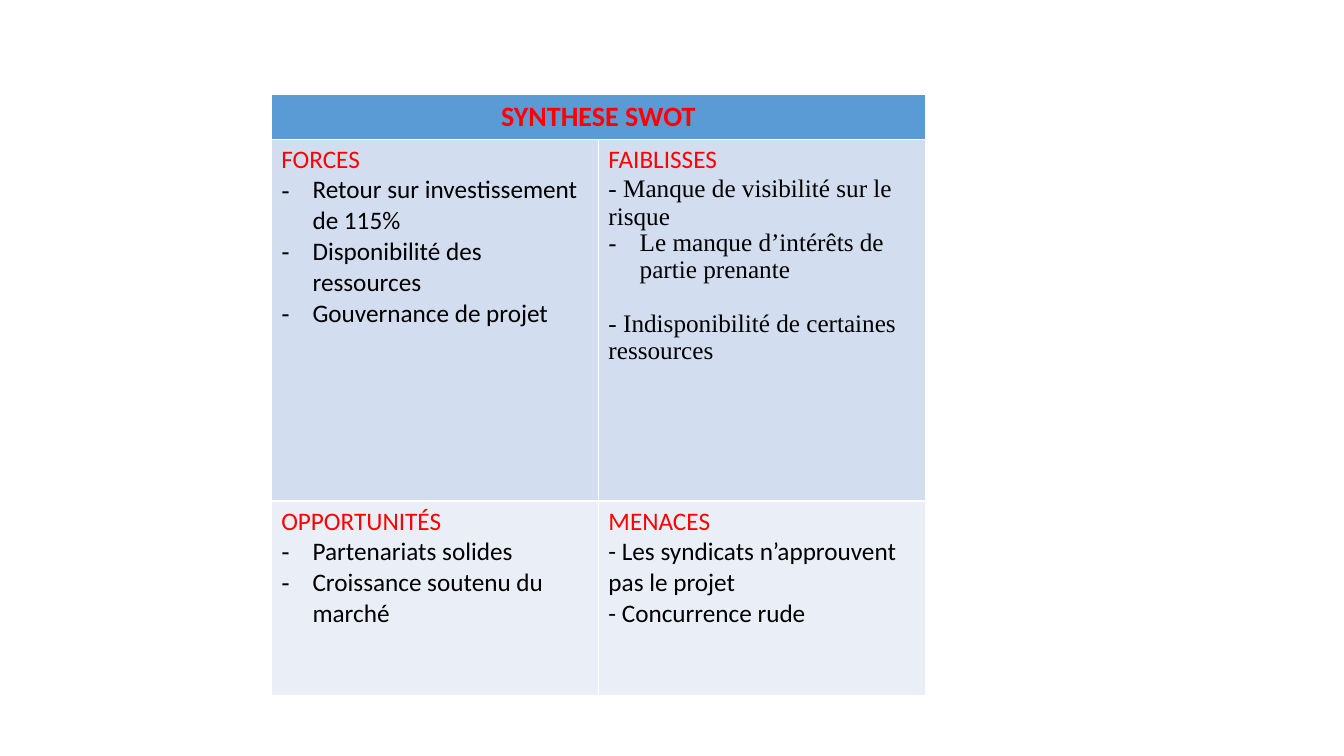
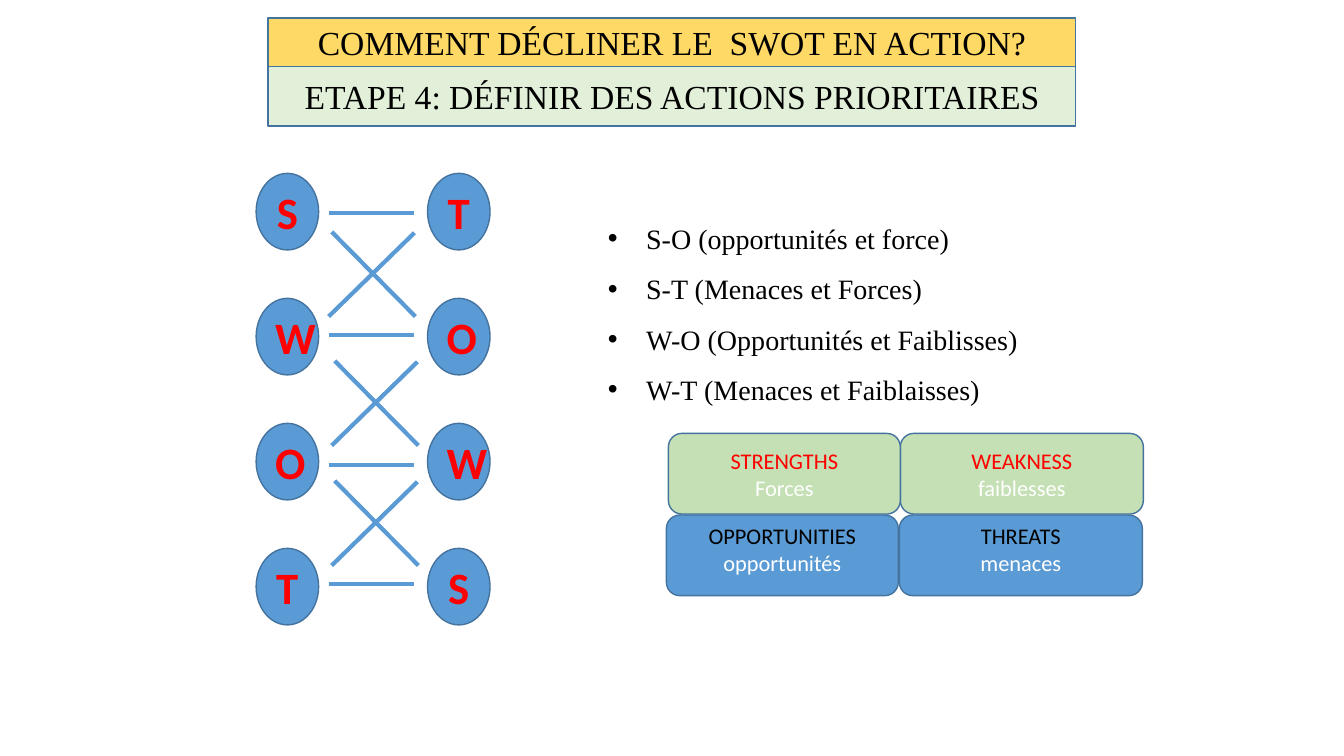
from dataclasses import dataclass

from lxml.etree import SubElement
from pptx import Presentation
from pptx.dml.color import RGBColor
from pptx.enum.shapes import MSO_CONNECTOR, MSO_SHAPE
from pptx.enum.text import MSO_ANCHOR, MSO_AUTO_SIZE, PP_ALIGN
from pptx.oxml.ns import qn
from pptx.shapes.autoshape import Shape
from pptx.slide import Slide
from pptx.table import _Cell as Cell
from pptx.text.text import TextFrame, _Paragraph as Paragraph
from pptx.util import Inches, Pt

BLUE = RGBColor(0x5B, 0x9B, 0xD5)
DARK_BLUE = RGBColor(0x43, 0x73, 0x9E)
PALE_BLUE = RGBColor(0xD2, 0xDE, 0xEF)
PALEST_BLUE = RGBColor(0xEA, 0xEF, 0xF7)
GREEN = RGBColor(0xC5, 0xE0, 0xB4)
PALE_GREEN = RGBColor(0xE2, 0xF0, 0xD9)
YELLOW = RGBColor(0xFF, 0xD9, 0x66)
RED = RGBColor(0xFF, 0x00, 0x00)
BLACK = RGBColor(0x00, 0x00, 0x00)
WHITE = RGBColor(0xFF, 0xFF, 0xFF)

SANS = "Calibri"
SERIF = "Times New Roman"
TITLE_ONLY_LAYOUT, BLANK_LAYOUT = 5, 6


@dataclass(frozen=True)
class Line:
    text: str
    size: float = 18
    color: RGBColor = BLACK
    font: str = SANS
    bold: bool = False
    bullet: str = ""
    hanging: float = 0.31
    spacing: float = 1.0
    space_before: float = 0
    align: PP_ALIGN = PP_ALIGN.LEFT


@dataclass(frozen=True)
class Box:
    left: float
    top: float
    width: float
    height: float

    def lengths(self) -> tuple[Inches, Inches, Inches, Inches]:
        return Inches(self.left), Inches(self.top), Inches(self.width), Inches(self.height)


@dataclass(frozen=True)
class Card:
    box: Box
    english: str
    french: str
    fill: RGBColor
    heading_color: RGBColor
    raised: bool = False


def dash(text: str) -> Line:
    return Line(text, bullet="-")


def heading(text: str) -> Line:
    return Line(text, color=RED)


SWOT_ROWS = [
    (PALE_BLUE, [
        [heading("FORCES"), dash("Retour sur investissement de 115%"),
         dash("Disponibilité des ressources"), dash("Gouvernance de projet")],
        [heading("FAIBLISSES"),
         Line("- Manque de visibilité sur le risque", font=SERIF),
         Line("Le manque d’intérêts de partie prenante", font=SERIF, bullet="-", spacing=0.95),
         Line("- Indisponibilité de certaines ressources", font=SERIF, spacing=0.95,
              space_before=20)],
    ]),
    (PALEST_BLUE, [
        [heading("OPPORTUNITÉS"), dash("Partenariats solides"),
         dash("Croissance soutenu du marché")],
        [heading("MENACES"), Line("- Les syndicats n’approuvent pas le projet"),
         Line("- Concurrence rude")],
    ]),
]
ROW_HEIGHTS = (0.44, 3.59, 1.93)
COLUMN_WIDTH = 3.245

LETTER_COLUMNS = ((2.54, "SWOT"), (4.24, "TOWS"))
LETTER_TOP, LETTER_PITCH = 1.72, 1.24
RUNG_TOPS = (2.11, 3.32, 4.61, 5.79)
CROSSES = ((3.29, 2.3), (3.32, 3.58), (3.32, 4.77))

PAIRINGS = (
    "S-O (opportunités et force)",
    "S-T (Menaces et Forces)",
    "W-O (Opportunités et Faiblisses)",
    "W-T (Menaces et Faiblaisses)",
)
CARDS = (
    Card(Box(8.92, 5.11, 2.41, 0.8), "THREATS", "menaces", BLUE, BLACK, raised=True),
    Card(Box(8.93, 4.3, 2.41, 0.8), "WEAKNESS", "faiblesses", GREEN, RED),
    Card(Box(6.63, 4.3, 2.3, 0.8), "STRENGTHS", "Forces", GREEN, RED),
    Card(Box(6.61, 5.11, 2.3, 0.8), "OPPORTUNITIES", "opportunités", BLUE, BLACK, raised=True),
)


def add_bullet(paragraph: Paragraph, character: str, hanging: float) -> None:
    properties = paragraph._p.get_or_add_pPr()
    properties.set("marL", str(Inches(hanging)))
    properties.set("indent", str(-Inches(hanging)))
    SubElement(properties, qn("a:buFont")).set("typeface", "Arial")
    SubElement(properties, qn("a:buChar")).set("char", character)


def write_lines(text_frame: TextFrame, lines: list[Line]) -> None:
    text_frame.text = "\n".join(line.text for line in lines)
    for paragraph, line in zip(text_frame.paragraphs, lines):
        paragraph.alignment = line.align
        paragraph.line_spacing = line.spacing
        paragraph.space_before = Pt(line.space_before)
        if line.bullet:
            add_bullet(paragraph, line.bullet, line.hanging)
        for run in paragraph.runs:
            run.font.size = Pt(line.size)
            run.font.name = line.font
            run.font.bold = line.bold
            run.font.color.rgb = line.color


def paint(shape: Shape, fill: RGBColor) -> None:
    shape.fill.solid()
    shape.fill.fore_color.rgb = fill
    shape.line.color.rgb = DARK_BLUE
    shape.line.width = Pt(1)


def add_filled_shape(slide: Slide, kind: MSO_SHAPE, box: Box, fill: RGBColor,
                     lines: list[Line]) -> Shape:
    shape = slide.shapes.add_shape(kind, *box.lengths())
    shape.shadow.inherit = False
    paint(shape, fill)
    write_lines(shape.text_frame, lines)
    shape.text_frame.vertical_anchor = MSO_ANCHOR.MIDDLE
    return shape


def add_link(slide: Slide, start: tuple[float, float], end: tuple[float, float]) -> None:
    points = [Inches(value) for value in (*start, *end)]
    connector = slide.shapes.add_connector(MSO_CONNECTOR.STRAIGHT, *points)
    connector.line.color.rgb = BLUE
    connector.line.width = Pt(3)
    SubElement(connector._element.spPr, qn("a:effectLst"))


def fill_cell(cell: Cell, fill: RGBColor, lines: list[Line]) -> None:
    cell.fill.solid()
    cell.fill.fore_color.rgb = fill
    write_lines(cell.text_frame, lines)


def add_swot_table(slide: Slide) -> None:
    box = Box(2.69, 0.94, 2 * COLUMN_WIDTH, sum(ROW_HEIGHTS))
    table = slide.shapes.add_table(len(ROW_HEIGHTS), 2, *box.lengths()).table
    for row, height in zip(table.rows, ROW_HEIGHTS):
        row.height = Inches(height)
    for column in table.columns:
        column.width = Inches(COLUMN_WIDTH)
    table.cell(0, 0).merge(table.cell(0, 1))
    fill_cell(table.cell(0, 0), BLUE,
              [Line("SYNTHESE SWOT", 20, RED, bold=True, align=PP_ALIGN.CENTER)])
    for row_index, (fill, cells) in enumerate(SWOT_ROWS, start=1):
        for column_index, lines in enumerate(cells):
            fill_cell(table.cell(row_index, column_index), fill, lines)


def add_title_bands(slide: Slide) -> None:
    step = Line("ETAPE 4: DÉFINIR DES ACTIONS PRIORITAIRES", 24, font=SERIF,
                align=PP_ALIGN.CENTER)
    add_filled_shape(slide, MSO_SHAPE.RECTANGLE, Box(2.66, 0.66, 8.01, 0.59), PALE_GREEN, [step])
    title = slide.shapes.title
    title.left, title.top, title.width, title.height = Box(2.66, 0.18, 8.01, 0.48).lengths()
    paint(title, YELLOW)
    write_lines(title.text_frame, [Line("COMMENT DÉCLINER LE  SWOT EN ACTION?", 24, font=SERIF,
                                        align=PP_ALIGN.CENTER)])
    title.text_frame.vertical_anchor = MSO_ANCHOR.MIDDLE
    title.text_frame.auto_size = MSO_AUTO_SIZE.NONE


def add_letter_network(slide: Slide) -> None:
    for left, letters in LETTER_COLUMNS:
        for index, letter in enumerate(letters):
            box = Box(left, LETTER_TOP + index * LETTER_PITCH, 0.62, 0.76)
            add_filled_shape(slide, MSO_SHAPE.OVAL, box, BLUE,
                             [Line(letter, 32, RED, bold=True, align=PP_ALIGN.CENTER)])
    for top in RUNG_TOPS:
        add_link(slide, (3.26, top), (4.11, top))
    for left, top in CROSSES:
        add_link(slide, (left, top), (left + 0.83, top + 0.84))
        add_link(slide, (left - 0.03, top + 0.84), (left + 0.82, top + 0.01))


def add_pairings(slide: Slide) -> None:
    text_frame = slide.shapes.add_textbox(*Box(5.93, 1.98, 6.25, 2.12).lengths()).text_frame
    text_frame.word_wrap = True
    write_lines(text_frame, [Line(text, 20, font=SERIF, bullet="•", hanging=0.38, spacing=1.5)
                             for text in PAIRINGS])


def add_card(slide: Slide, card: Card) -> None:
    lines = [Line(card.english, 16, card.heading_color, align=PP_ALIGN.CENTER),
             Line(card.french, 16, WHITE, align=PP_ALIGN.CENTER)]
    shape = add_filled_shape(slide, MSO_SHAPE.ROUNDED_RECTANGLE, card.box, card.fill, lines)
    if card.raised:
        shape.text_frame.margin_top = Inches(0)
        shape.text_frame.margin_bottom = Inches(0.12)


def main() -> None:
    presentation = Presentation()
    presentation.slide_width = Inches(13.33)
    presentation.slide_height = Inches(7.5)
    layouts = presentation.slide_layouts

    add_swot_table(presentation.slides.add_slide(layouts[BLANK_LAYOUT]))

    actions = presentation.slides.add_slide(layouts[TITLE_ONLY_LAYOUT])
    add_title_bands(actions)
    add_letter_network(actions)
    add_pairings(actions)
    for card in CARDS:
        add_card(actions, card)

    presentation.save("out.pptx")


if __name__ == "__main__":
    main()
